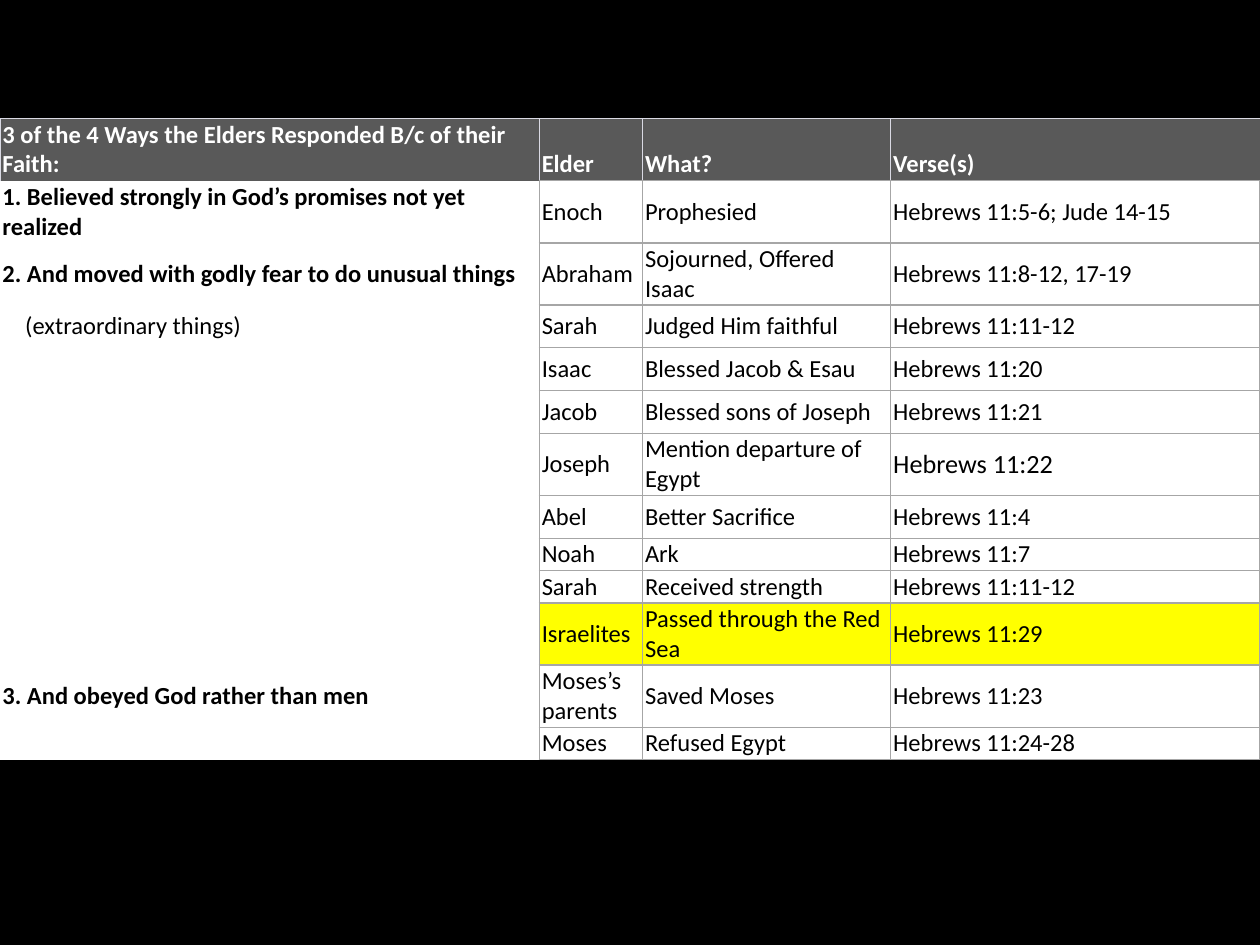
from dataclasses import dataclass

from lxml import etree
from pptx import Presentation
from pptx.dml.color import RGBColor
from pptx.enum import text
from pptx.oxml import ns
from pptx.util import Inches, Pt

FONT, SIZE = "Calibri", 14
BLACK, WHITE, YELLOW = "000000", "FFFFFF", "FFFF00"
HEADER_FILL, HEADER_LINE, GRID_LINE = "595959", "D9D9E3", "A6A6A6"
COLUMN_WIDTHS = (4.28, 0.82, 1.97, 2.93)
TALL, MEDIUM, SHORT = 0.47, 0.34, 0.25
INDENT = 0.18

Borders = dict[str, tuple[str, float]]
GRID: Borders = {side: (GRID_LINE, 1) for side in "LRTB"}
HEADER: Borders = {side: (HEADER_LINE, 0.5) for side in "LRT"}


@dataclass
class Entry:
    """One elder, with the response that starts on that row, if any."""
    elder: str
    deed: str
    verses: str
    height: float = MEDIUM
    response: str = ""
    bold: bool = True
    fill: str = WHITE
    verse_size: float = SIZE


HEADINGS = ("3 of the 4 Ways the Elders Responded B/c of their Faith:",
            "Elder", "What?", "Verse(s)")
ENTRIES = [
    Entry("Enoch", "Prophesied", "Hebrews 11:5-6; Jude 14-15",
          response="1. Believed strongly in God’s promises not yet realized"),
    Entry("Abraham", "Sojourned, Offered Isaac", "Hebrews 11:8-12, 17-19",
          response="2. And moved with godly fear to do unusual things"),
    Entry("Sarah", "Judged Him faithful", "Hebrews 11:11-12",
          response="(extraordinary things)", bold=False),
    Entry("Isaac", "Blessed Jacob & Esau", "Hebrews 11:20"),
    Entry("Jacob", "Blessed sons of Joseph", "Hebrews 11:21"),
    Entry("Joseph", "Mention departure of Egypt", "Hebrews 11:22", TALL, verse_size=15),
    Entry("Abel", "Better Sacrifice", "Hebrews 11:4"),
    Entry("Noah", "Ark", "Hebrews 11:7", SHORT),
    Entry("Sarah", "Received strength", "Hebrews 11:11-12", SHORT),
    Entry("Israelites", "Passed through the Red Sea", "Hebrews 11:29", SHORT, fill=YELLOW),
    Entry("Moses’s parents", "Saved Moses", "Hebrews 11:23", TALL,
          response="3. And obeyed God rather than men"),
    Entry("Moses", "Refused Egypt", "Hebrews 11:24-28", SHORT),
]


def color(value: str) -> RGBColor:
    return RGBColor.from_string(value)


def set_borders(cell, borders: Borders) -> None:
    """Draw the given sides and hide the others."""
    properties = cell._tc.get_or_add_tcPr()
    for side in "LRTB":
        line = etree.SubElement(properties, ns.qn(f"a:ln{side}"))
        if side in borders:
            line_color, width = borders[side]
            line.set("w", str(Pt(width)))
            fill = etree.SubElement(line, ns.qn("a:solidFill"))
            etree.SubElement(fill, ns.qn("a:srgbClr")).set("val", line_color)
        else:
            etree.SubElement(line, ns.qn("a:noFill"))


def write_cell(cell, words: str, borders: Borders, fill: str = WHITE,
               ink: str = BLACK, bold: bool = False, size: float = SIZE,
               indent: float = 0, anchor=text.MSO_ANCHOR.MIDDLE) -> None:
    set_borders(cell, borders)
    cell.fill.solid()
    cell.fill.fore_color.rgb = color(fill)
    cell.margin_left, cell.margin_right = Inches(0.02 + indent), Inches(0.02)
    cell.margin_top = cell.margin_bottom = Inches(0.01)
    cell.vertical_anchor = anchor
    para = cell.text_frame.paragraphs[0]
    if not words:
        # An empty cell keeps the text size, so its row does not grow
        end = etree.SubElement(para._p, ns.qn("a:endParaRPr"))
        end.set("sz", str(size * 100))
        return
    para.text = words
    for span in para.runs:
        span.font.name, span.font.size, span.font.bold = FONT, Pt(size), bold
        span.font.color.rgb = color(ink)


def main() -> None:
    deck = Presentation()
    deck.slide_width, deck.slide_height = Inches(10), Inches(7.5)
    page = deck.slides.add_slide(deck.slide_layouts[6])
    page.background.fill.solid()
    page.background.fill.fore_color.rgb = color(BLACK)

    # Table grid
    frame = page.shapes.add_table(len(ENTRIES) + 1, len(COLUMN_WIDTHS),
                                  0, Inches(0.94), Inches(10), Inches(5.06))
    table = frame.table
    table.horz_banding = False
    for column, width in zip(table.columns, COLUMN_WIDTHS):
        column.width = Inches(width)
    heights = [TALL] + [entry.height for entry in ENTRIES]
    for row, height in zip(table.rows, heights):
        row.height = Inches(height)

    # Header row
    for column, heading in enumerate(HEADINGS):
        borders = HEADER | ({"B": GRID["B"]} if column else {})
        write_cell(table.cell(0, column), heading, borders, HEADER_FILL, WHITE,
                   bold=True, anchor=text.MSO_ANCHOR.BOTTOM)

    # One row per elder
    for row, entry in enumerate(ENTRIES, start=1):
        write_cell(table.cell(row, 0), entry.response, {"R": GRID["R"]},
                   bold=entry.bold, indent=0 if entry.bold else INDENT)
        write_cell(table.cell(row, 1), entry.elder, GRID, entry.fill)
        write_cell(table.cell(row, 2), entry.deed, GRID, entry.fill)
        write_cell(table.cell(row, 3), entry.verses, GRID, entry.fill,
                   size=entry.verse_size)

    deck.save("out.pptx")


if __name__ == "__main__":
    main()
